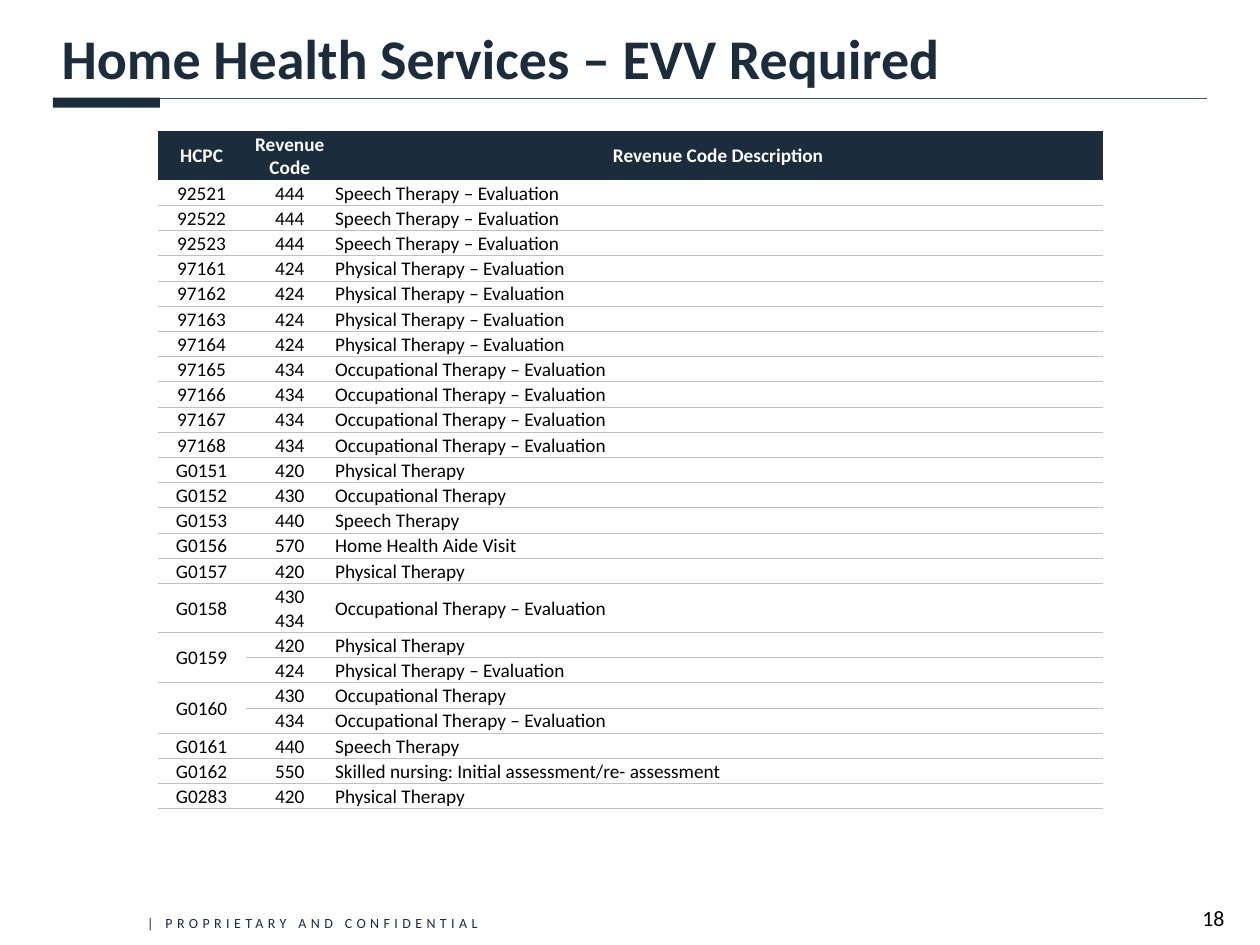
from lxml import etree
from pptx import Presentation
from pptx.dml.color import RGBColor
from pptx.enum.shapes import MSO_CONNECTOR, MSO_SHAPE
from pptx.enum.text import MSO_ANCHOR, PP_ALIGN
from pptx.oxml.ns import qn
from pptx.util import Inches, Pt

LEFT, CENTER = PP_ALIGN.LEFT, PP_ALIGN.CENTER
TOP, MIDDLE = MSO_ANCHOR.TOP, MSO_ANCHOR.MIDDLE
STRAIGHT, RECTANGLE = MSO_CONNECTOR.STRAIGHT, MSO_SHAPE.RECTANGLE

COLORS = {"navy": "1B2C3D", "rule": "435469", "border": "BFBFBF",
          "white": "FFFFFF", "black": "000000"}
FONT = "Calibri"
UNIT = Inches(0.1)
NO_STYLE = "{2D5ABB26-0587-4C30-8999-92F81FD0307C}"

SPEECH, PHYSICAL, OCCUPATIONAL = "Speech Therapy", "Physical Therapy", "Occupational Therapy"
EVALUATION = " – Evaluation"
HEADER = ("HCPC", "Revenue Code", "Revenue Code Description")
COLUMN_WIDTHS = (7, 7, 61)
ROW_HEIGHT, TALL_ROW_HEIGHT = 2, 3.9
SERVICES = [
    *((str(code), "444", SPEECH + EVALUATION) for code in range(92521, 92524)),
    *((str(code), "424", PHYSICAL + EVALUATION) for code in range(97161, 97165)),
    *((str(code), "434", OCCUPATIONAL + EVALUATION) for code in range(97165, 97169)),
    ("G0151", "420", PHYSICAL),
    ("G0152", "430", OCCUPATIONAL),
    ("G0153", "440", SPEECH),
    ("G0156", "570", "Home Health Aide Visit"),
    ("G0157", "420", PHYSICAL),
    ("G0158", "430\n434", OCCUPATIONAL + EVALUATION),
    ("G0159", "420", PHYSICAL),
    ("", "424", PHYSICAL + EVALUATION),
    ("G0160", "430", OCCUPATIONAL),
    ("", "434", OCCUPATIONAL + EVALUATION),
    ("G0161", "440", SPEECH),
    ("G0162", "550", "Skilled nursing: Initial assessment/re- assessment"),
    ("G0283", "420", PHYSICAL),
]


def grid(*units):
    """Turn grid units into slide lengths."""
    return [int(u * UNIT) for u in units]


def color(name):
    """Look up a palette colour."""
    return RGBColor.from_string(COLORS[name])


def style(p, size, name, bold=False, align=LEFT):
    """Set the font and alignment of a paragraph."""
    p.alignment = align
    p.font.name, p.font.size, p.font.bold = FONT, Pt(size), bold
    p.font.color.rgb = color(name)


def add_text(slide, box, text, size, name, bold=False, align=LEFT, anchor=TOP, inset=None):
    """Add a one-paragraph text box and return its paragraph."""
    tf = slide.shapes.add_textbox(*grid(*box)).text_frame
    tf.word_wrap = True
    tf.vertical_anchor = anchor
    if inset is not None:
        tf.margin_left = tf.margin_right = tf.margin_top = tf.margin_bottom = inset
    p = tf.paragraphs[0]
    p.text = text
    style(p, size, name, bold, align)
    return p


def add_title_rule(slide):
    """Draw the thin rule and the thick bar under the title."""
    line = slide.shapes.add_connector(STRAIGHT, *grid(4.2, 7.8, 95.8, 7.8))
    line.line.color.rgb = color("rule")
    line.line.width = Pt(0.5)
    etree.SubElement(line._element.spPr, qn("a:effectLst"))
    bar = slide.shapes.add_shape(RECTANGLE, *grid(4.2, 7.75, 8.5, 0.8))
    bar.shadow.inherit = False
    bar.fill.solid()
    bar.fill.fore_color.rgb = color("navy")
    bar.line.fill.background()


def add_bottom_border(cell):
    """Give a cell a thin bottom border."""
    ln = etree.Element(qn("a:lnB"), w=str(Pt(0.5)))
    fill = etree.SubElement(ln, qn("a:solidFill"))
    etree.SubElement(fill, qn("a:srgbClr"), val=COLORS["border"])
    cell._tc.get_or_add_tcPr().insert(0, ln)


def fill_cell(cell, text, header, align):
    """Write and format one table cell."""
    cell.text = text
    cell.vertical_anchor = MIDDLE
    cell.margin_left = cell.margin_right = cell.margin_top = Inches(0.01)
    cell.margin_bottom = 0
    for p in cell.text_frame.paragraphs:
        style(p, 11, "white" if header else "black", header, align)
    if header:
        cell.fill.solid()
        cell.fill.fore_color.rgb = color("navy")
    else:
        cell.fill.background()
        add_bottom_border(cell)


def add_service_table(slide):
    """Add the table of service codes, merging codes that span rows."""
    rows = [HEADER, *SERVICES]
    box = grid(12.5, 10.4, sum(COLUMN_WIDTHS), ROW_HEIGHT * len(rows))
    table = slide.shapes.add_table(len(rows), len(HEADER), *box).table
    table._tbl.tblPr.find(qn("a:tableStyleId")).text = NO_STYLE
    table.horz_banding = False
    for column, width in zip(table.columns, grid(*COLUMN_WIDTHS)):
        column.width = width
    for i, row in enumerate(rows):
        header = i == 0
        tall = header or "\n" in row[1]
        table.rows[i].height = grid(TALL_ROW_HEIGHT if tall else ROW_HEIGHT)[0]
        for j, text in enumerate(row):
            fill_cell(table.cell(i, j), text, header, CENTER if header or j < 2 else LEFT)
        if not row[0]:
            table.cell(i - 1, 0).merge(table.cell(i, 0))


def main():
    """Build and save the slide."""
    prs = Presentation()
    prs.slide_width, prs.slide_height = grid(100, 75)
    slide = prs.slides.add_slide(prs.slide_layouts[6])
    footer = add_text(slide, (10.7, 72.1, 29.4, 2.4), "| PROPRIETARY AND CONFIDENTIAL", 8, "navy")
    footer.runs[0].font._element.set("spc", "250")
    add_text(slide, (93.6, 71.8, 5.4, 2.1), "18", 12.5, "black", align=CENTER, inset=0)
    add_title_rule(slide)
    title = add_text(slide, (3.9, 1.7, 92.3, 6.3), "Home Health Services – EVV Required",
                     32, "navy", bold=True, anchor=MIDDLE)
    title.line_spacing = 0.9
    add_service_table(slide)
    prs.save("out.pptx")


if __name__ == "__main__":
    main()
